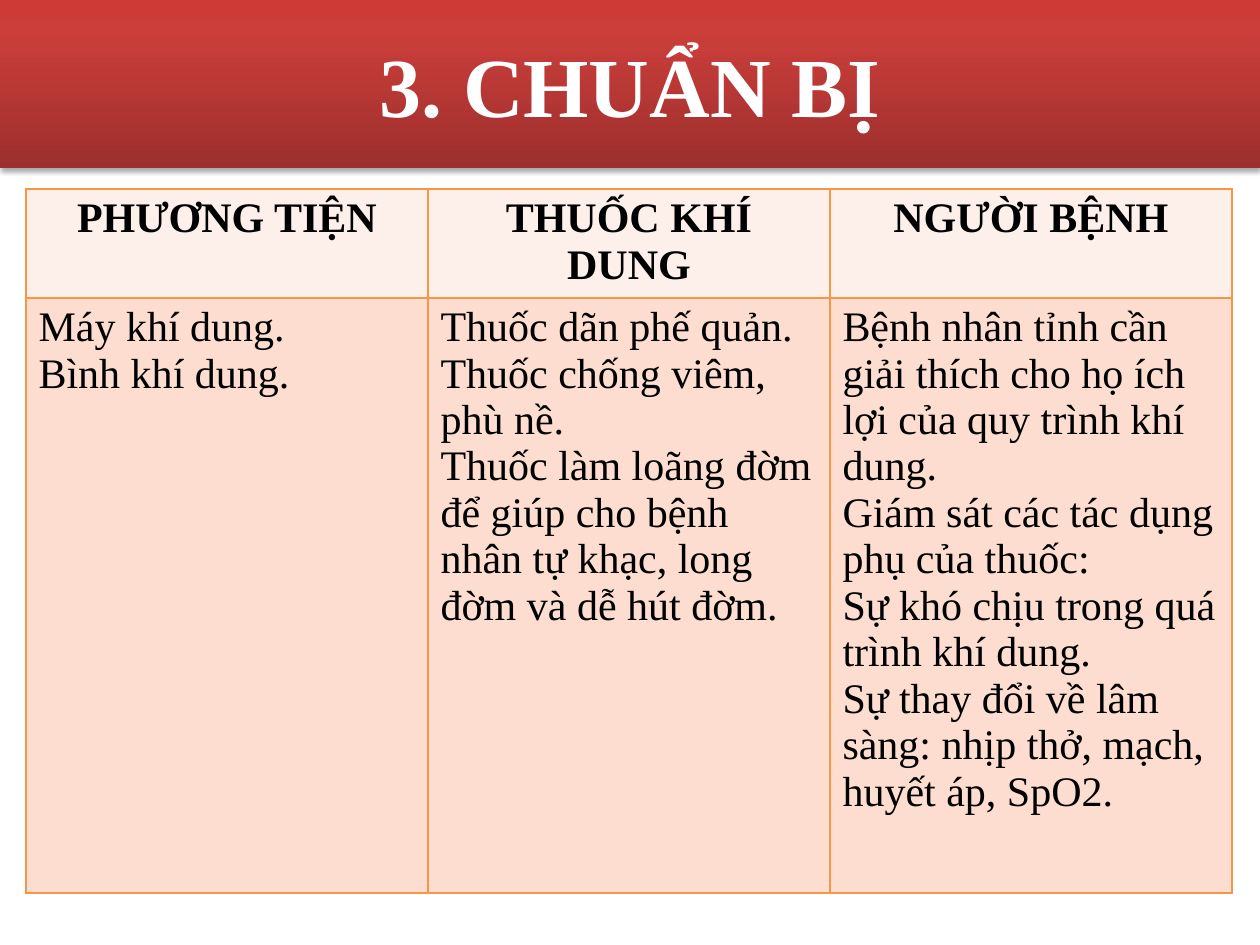
from lxml.etree import SubElement
from pptx import Presentation
from pptx.dml.color import RGBColor
from pptx.enum.shapes import MSO_SHAPE
from pptx.enum.text import MSO_ANCHOR, PP_ALIGN
from pptx.oxml.ns import qn
from pptx.util import Emu, Pt


def px(n):
    return Emu(round(n * 914400 / 126))


def color(code):
    return RGBColor.from_string(code)


def add(parent, tag, **attrs):
    return SubElement(parent, qn(tag), {k: str(v) for k, v in attrs.items()})


class Deck:
    font = "Times New Roman"
    line = "F79646"

    def __init__(self, width, height):
        self.file = Presentation()
        self.file.slide_width, self.file.slide_height = px(width), px(height)
        self.slide = self.file.slides.add_slide(self.file.slide_layouts[6])

    def label(self, frame, text, size, ink, bold, align):
        frame.text = text
        for para in frame.paragraphs:
            para.alignment = align
            for run in para.runs:
                run.font.name, run.font.size = self.font, Pt(size)
                run.font.bold = bold
                run.font.color.rgb = color(ink)

    def banner(self, text, box, stops):
        shape = self.slide.shapes.add_shape(MSO_SHAPE.RECTANGLE, *map(px, box))
        shape.line.fill.background()
        shape.fill.gradient()
        shape.fill.gradient_angle = 90
        grad = shape._element.spPr.find(qn("a:gradFill"))
        holder = grad.find(qn("a:gsLst"))
        for stop in list(holder):
            holder.remove(stop)
        for pos, code in stops:
            add(add(holder, "a:gs", pos=pos * 1000), "a:srgbClr", val=code)
        self.shade(shape)
        shape.text_frame.vertical_anchor = MSO_ANCHOR.MIDDLE
        self.label(shape.text_frame, text, 48, "FFFFFF", True, PP_ALIGN.CENTER)

    def shade(self, shape):
        shape.shadow.inherit = False
        effects = shape._element.spPr.find(qn("a:effectLst"))
        outer = add(effects, "a:outerShdw", blurRad=Pt(3.1), dist=Pt(1.8),
                    dir=5400000, rotWithShape=0)
        add(add(outer, "a:srgbClr", val="000000"), "a:alpha", val=35000)

    def border(self, cell):
        props = cell._tc.get_or_add_tcPr()
        for side in ("L", "R", "T", "B"):
            edge = add(props, f"a:ln{side}", w=Pt(1))
            add(add(edge, "a:solidFill"), "a:srgbClr", val=self.line)

    def table(self, rows, left, top, width, heights, fills):
        count = len(rows[0])
        table = self.slide.shapes.add_table(
            len(rows), count, px(left), px(top),
            px(width * count), px(sum(heights))).table
        for col in table.columns:
            col.width = px(width)
        for r, (texts, height, fill) in enumerate(zip(rows, heights, fills)):
            head = r == 0
            align = PP_ALIGN.CENTER if head else PP_ALIGN.LEFT
            table.rows[r].height = px(height)
            for c, text in enumerate(texts):
                cell = table.cell(r, c)
                self.border(cell)
                cell.fill.solid()
                cell.fill.fore_color.rgb = color(fill)
                self.label(cell.text_frame, text, 24, "000000", head, align)


def main():
    deck = Deck(1260, 945)
    tools = "Máy khí dung.\nBình khí dung."
    drugs = (
        "Thuốc dãn phế quản.\n"
        "Thuốc chống viêm, phù nề.\n"
        "Thuốc làm loãng đờm để giúp cho bệnh nhân tự khạc, "
        "long đờm và dễ hút đờm."
    )
    patient = (
        "Bệnh nhân tỉnh cần giải thích cho họ ích lợi của quy trình khí dung.\n"
        "Giám sát các tác dụng phụ của thuốc:\n"
        "Sự khó chịu trong quá trình khí dung.\n"
        "Sự thay đổi về lâm sàng: nhịp thở, mạch, huyết áp, SpO2."
    )
    heads = ("PHƯƠNG TIỆN", "THUỐC KHÍ DUNG", "NGƯỜI BỆNH")
    deck.table((heads, (tools, drugs, patient)), 26, 189, 402,
               (109, 595), ("FDEFE9", "FCDDCF"))
    deck.banner("3. CHUẨN BỊ", (0, 0, 1260, 168),
                ((0, "9C2F2D"), (80, "CB3E3A"), (100, "CE3B37")))
    deck.file.save("out.pptx")


if __name__ == "__main__":
    main()
